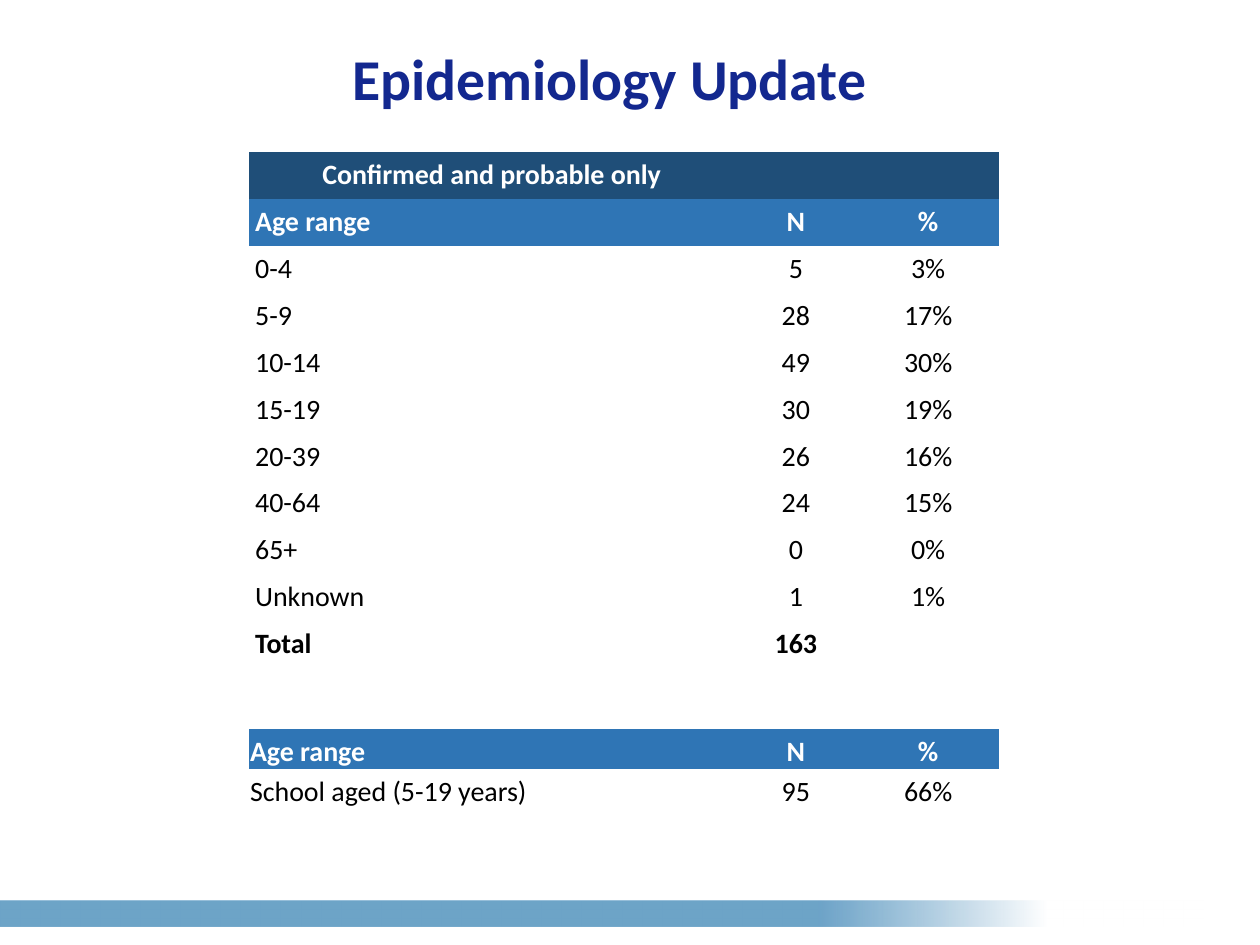
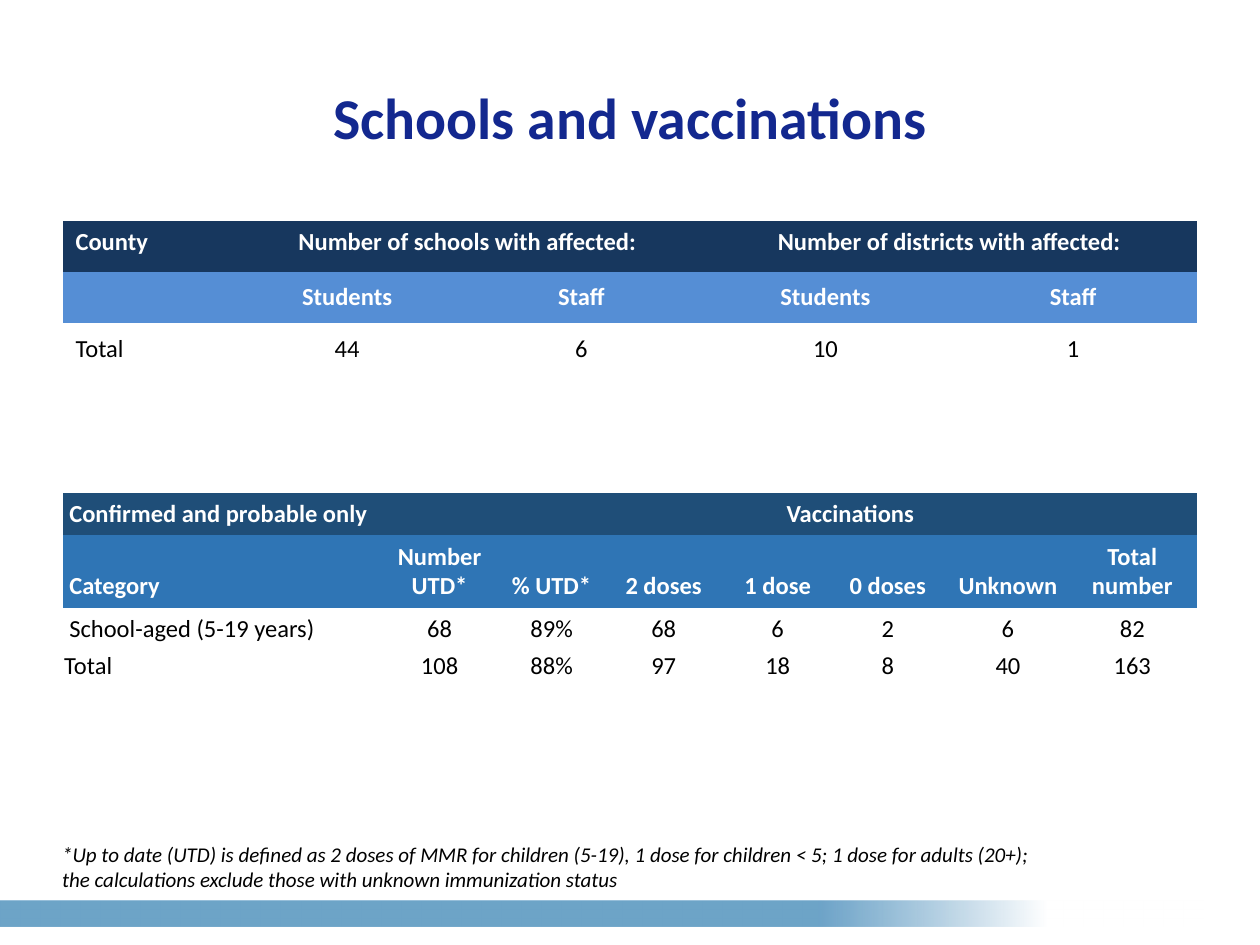
"""Build two slides of outbreak tables: age ranges, then schools and vaccinations."""
from lxml.etree import SubElement
from pptx import Presentation
from pptx.dml.color import RGBColor
from pptx.enum.shapes import MSO_SHAPE
from pptx.enum.text import MSO_ANCHOR, PP_ALIGN
from pptx.oxml.ns import qn
from pptx.util import Pt

FONT = "Calibri"
TITLE, WHITE, BLACK = "13288F", "FFFFFF", "000000"
NAVY, BLUE = "1F4E78", "2F75B5"
DEEP, SKY = "17375E", "558ED5"
BAND = "5E9AC2"
NO_STYLE = "{2D5ABB26-0587-4C30-8999-92F81FD0307C}"
TOP, MIDDLE, BOTTOM = MSO_ANCHOR.TOP, MSO_ANCHOR.MIDDLE, MSO_ANCHOR.BOTTOM
WIDE = (7.2, 3.6, 7.2, 3.6)
EVEN = (3.6, 3.6, 3.6, 3.6)
TIGHT = (0.7, 0.7, 0.7, 0)


def add_text(s, box, text, size, color, anchor=TOP, align=PP_ALIGN.LEFT, bold=False, italic=False):
    sp = s.shapes.add_textbox(*map(Pt, box))
    tf = sp.text_frame
    tf.word_wrap = True
    tf.vertical_anchor = anchor
    tf.text = text
    p = tf.paragraphs[0]
    p.alignment = align
    font = p.runs[0].font
    font.name, font.size, font.bold, font.italic = FONT, Pt(size), bold, italic
    font.color.rgb = RGBColor.from_string(color)


def add_grid(s, left, top, cols, heights, rows, size, fills, insets, anchors):
    box = map(Pt, (left, top, sum(cols), sum(heights)))
    frame = s.shapes.add_table(len(rows), len(cols), *box)
    table = frame.table
    frame.element.xpath(".//a:tableStyleId")[0].text = NO_STYLE
    for col, width in zip(table.columns, cols):
        col.width = Pt(width)
    for i, row in enumerate(rows):
        table.rows[i].height = Pt(heights[i])
        header = i < len(fills)
        for j, text in enumerate(row):
            cell = table.cell(i, j)
            if header:
                cell.fill.solid()
                cell.fill.fore_color.rgb = RGBColor.from_string(fills[i])
            else:
                cell.fill.background()
            cell.margin_left, cell.margin_top, cell.margin_right, cell.margin_bottom = map(Pt, insets[i])
            cell.vertical_anchor = anchors[i]
            cell.text = text
            p = cell.text_frame.paragraphs[0]
            p.alignment = PP_ALIGN.CENTER if j else PP_ALIGN.LEFT
            for r in p.runs:
                r.font.name, r.font.size, r.font.bold = FONT, Pt(size), header
                r.font.color.rgb = RGBColor.from_string(WHITE if header else BLACK)
            if not text:
                SubElement(p._p, qn("a:endParaRPr"), sz=str(size * 100))
    return table


prs = Presentation()
prs.slide_width, prs.slide_height = Pt(720), Pt(540)

titles = [
    ("Epidemiology Update", (38.2, 1.4, 620, 85.7)),
    ("Schools and vaccinations", (36, 21.6, 648, 90)),
]
for title, box in titles:
    s = prs.slides.add_slide(prs.slide_layouts[6])
    sp = s.shapes.add_shape(MSO_SHAPE.RECTANGLE, Pt(0), Pt(514.5), Pt(687.6), Pt(15.1))
    sp.shadow.inherit = False
    sp.line.fill.background()
    sp.fill.gradient()
    sp.fill.gradient_angle = 0
    for stop, color, position in zip(sp.fill.gradient_stops, (BAND, WHITE), (0.68, 0.87)):
        stop.color.rgb = RGBColor.from_string(color)
        stop.position = position
    SubElement(sp.element.xpath(".//a:gs/a:srgbClr")[0], qn("a:alpha"), val="90000")
    add_text(s, box, title, 33, TITLE, MIDDLE, PP_ALIGN.CENTER, bold=True)

epidemiology, schools = prs.slides

age_cols = [277.6, 70, 81.2]
age_header = ["Age range", "N", "%"]
age_rows = [
    ["Confirmed and probable only", "", ""],
    age_header,
    ["0-4", "5", "3%"],
    ["5-9", "28", "17%"],
    ["10-14", "49", "30%"],
    ["15-19", "30", "19%"],
    ["20-39", "26", "16%"],
    ["40-64", "24", "15%"],
    ["65+", "0", "0%"],
    ["Unknown", "1", "1%"],
    ["Total", "163", ""],
]
n = len(age_rows)
table = add_grid(epidemiology, 142.2, 86.7, age_cols, [26.8] * n, age_rows, 16,
                 [NAVY, BLUE], [EVEN] * n, [BOTTOM] * n)
table.cell(0, 0).text_frame.paragraphs[0].alignment = PP_ALIGN.CENTER
for j in range(2):
    table.cell(n - 1, j).text_frame.paragraphs[0].runs[0].font.bold = True

school_aged = [age_header, ["School aged (5-19 years)", "95", "66%"]]
add_grid(epidemiology, 142.2, 416.4, age_cols, [23] * 2, school_aged, 16,
         [BLUE], [TIGHT] * 2, [BOTTOM] * 2)

school_rows = [
    ["County", "Number of schools with affected:", "", "Number of districts with affected:", ""],
    ["", "Students", "Staff", "Students", "Staff"],
    ["Total", "44", "6", "10", "1"],
]
table = add_grid(schools, 36, 126.2, [97.2, 130.3, 137.5, 141.5, 141.5], [29.2] * 3, school_rows, 14,
                 [DEEP, SKY], [WIDE] * 3, [TOP, MIDDLE, MIDDLE])
for j in (1, 3):
    table.cell(0, j).merge(table.cell(0, j + 1))

vaccination_rows = [
    ["Confirmed and probable only", "", "Vaccinations", "", "", "", "", ""],
    ["Category", "Number UTD*", "% UTD*", "2 doses", "1 dose", "0 doses", "Unknown", "Total number"],
    ["School-aged (5-19 years)", "68", "89%", "68", "6", "2", "6", "82"],
    ["Total", "108", "88%", "97", "18", "8", "40", "163"],
]
table = add_grid(schools, 36, 281.7, [178.5, 73.4, 54.7, 73.4, 56.9, 69, 68.3, 73.8],
                 [24.2, 41.4, 24.2, 17.4], vaccination_rows, 14,
                 [NAVY, BLUE], [EVEN] * 3 + [TIGHT], [BOTTOM] * 4)
table.cell(0, 2).merge(table.cell(0, 7))

add_text(schools, (28.4, 477.4, 578, 36),
         "*Up to date (UTD) is defined as 2 doses of MMR for children (5-19), 1 dose for children < 5; "
         "1 dose for adults (20+); the calculations exclude those with unknown immunization status",
         12, BLACK, italic=True)

prs.save("out.pptx")
